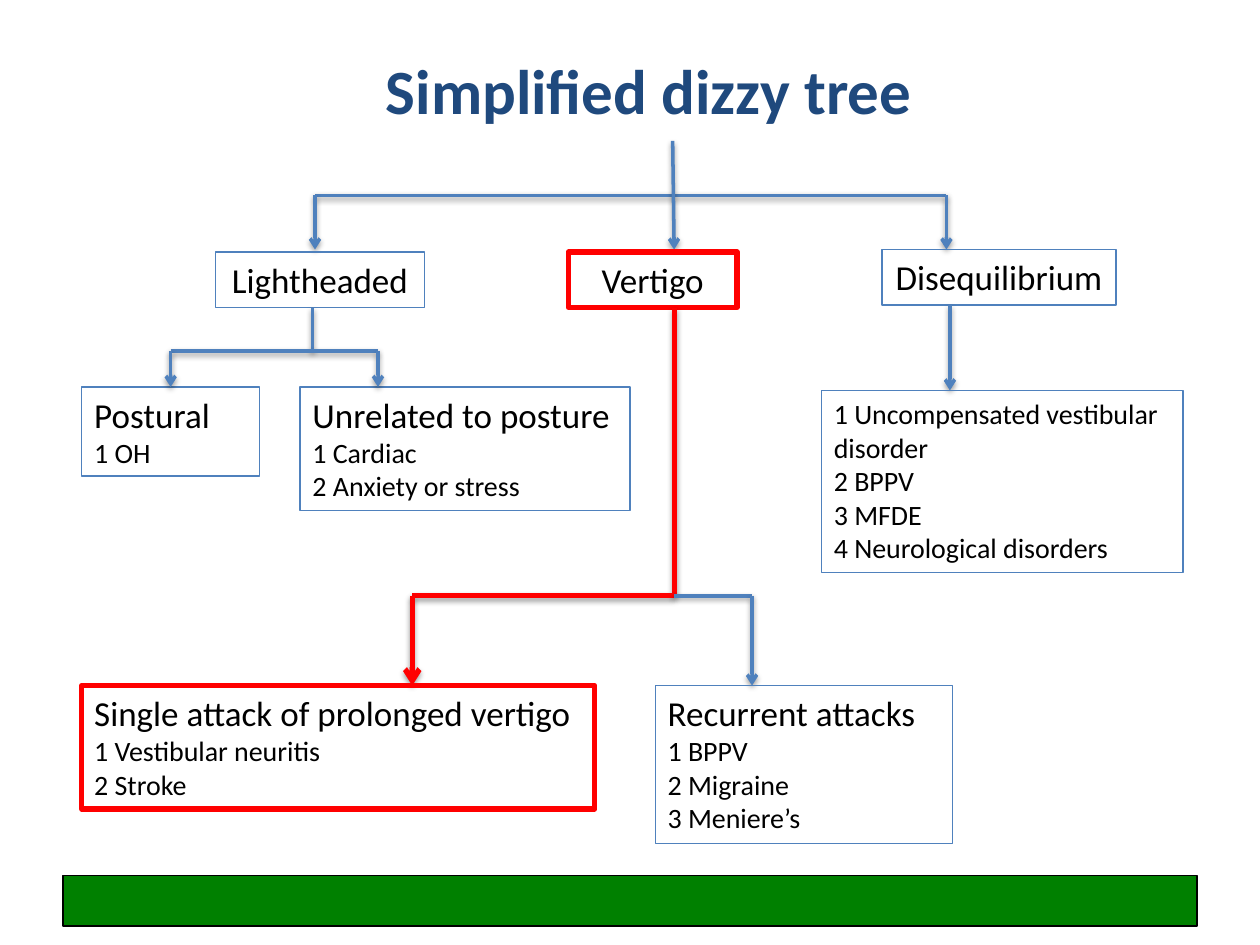
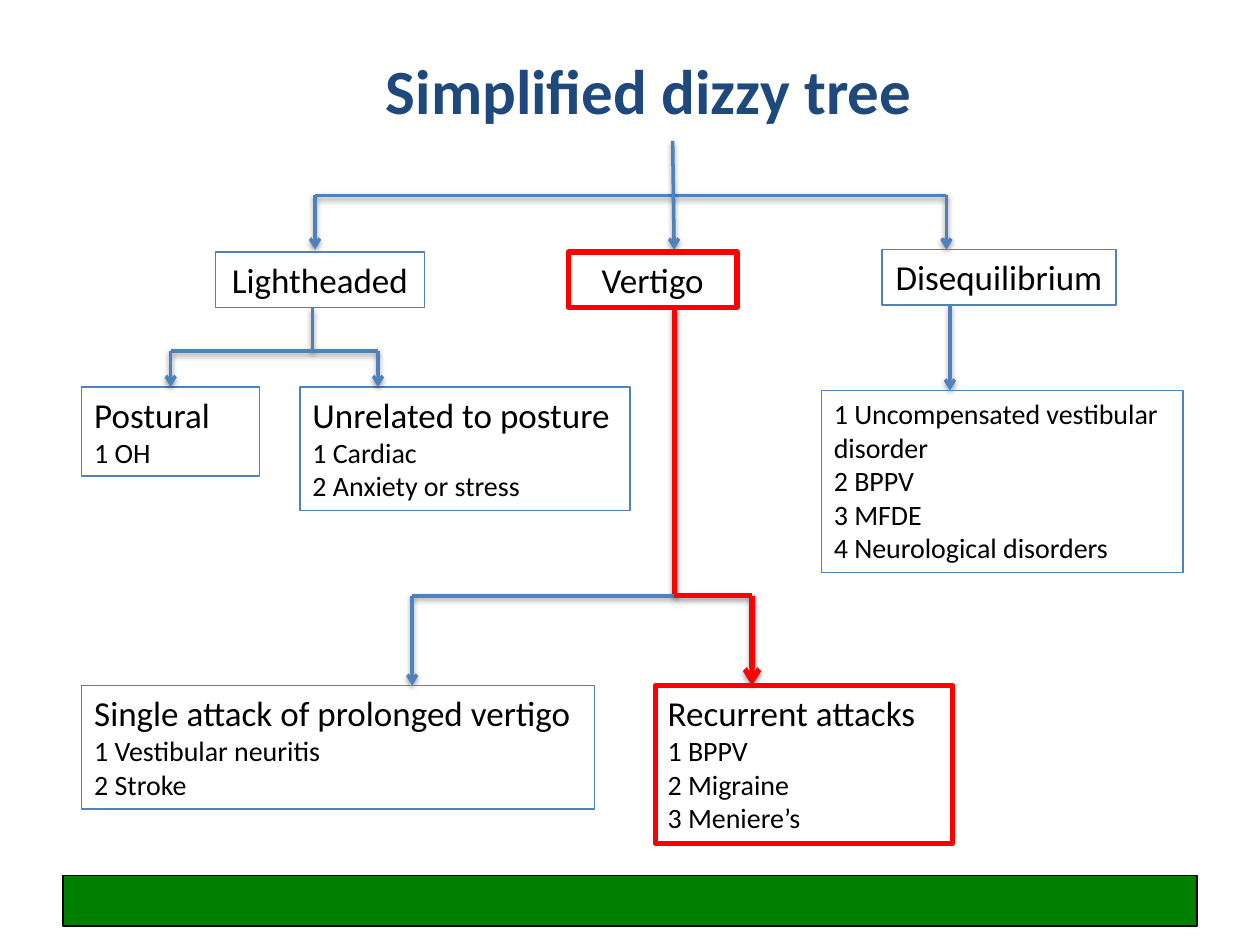
from pptx import Presentation
from pptx.dml.color import RGBColor
from pptx.enum.shapes import MSO_CONNECTOR, MSO_SHAPE
from pptx.enum.text import MSO_ANCHOR, MSO_AUTO_SIZE, PP_ALIGN
from pptx.oxml import parse_xml
from pptx.oxml.ns import nsdecls, qn
from pptx.util import Cm, Pt

RECT = MSO_SHAPE.RECTANGLE
STRAIGHT = MSO_CONNECTOR.STRAIGHT
MIDDLE = MSO_ANCHOR.MIDDLE
TOP = MSO_ANCHOR.TOP
GROW = MSO_AUTO_SIZE.SHAPE_TO_FIT_TEXT
LEFT, CENTER = PP_ALIGN.LEFT, PP_ALIGN.CENTER

FONT = "Calibri"
COLORS = {
    "title": "1F497D",
    "branch": "4F81BD",
    "highlight": "FF0000",
    "text": "000000",
    "band": "008000",
}
HEADING, ITEM = 20, 16
TITLE_ONLY = 5

TRUNK_X = 13.59
TYPE_BUS_Y, TYPE_TOP = 3.94, 5.03
LIGHT_X, LIGHT_BUS_Y, LIGHT_LEAF_TOP = 6.3, 7.08, 7.8
VERTIGO_BUS_Y, VERTIGO_LEAF_TOP = 12.01, 13.82
TYPE_HEIGHT, TYPE_BOTTOM = 1.12, 6.2

SHADOW = (
    f'<a:effectLst {nsdecls("a")}>'
    '<a:outerShdw blurRad="40000" dist="20000" dir="5400000" rotWithShape="0">'
    '<a:srgbClr val="000000"><a:alpha val="38000"/></a:srgbClr>'
    "</a:outerShdw></a:effectLst>"
)
ARROWHEAD = f'<a:tailEnd {nsdecls("a")} type="arrow"/>'


def rgb(name):
    return RGBColor.from_string(COLORS[name])


def format_paragraph(p, size, color="text", align=LEFT, bold=False):
    p.alignment = align
    for r in p.runs:
        r.font.name = FONT
        r.font.size = Pt(size)
        r.font.bold = bold
        r.font.color.rgb = rgb(color)


def add_title(s, text):
    title = s.shapes.title
    title.left, title.top = Cm(1.65), Cm(0.76)
    title.width, title.height = Cm(22.86), Cm(2.08)
    tf = title.text_frame
    tf.text = text
    tf.vertical_anchor = MIDDLE
    format_paragraph(tf.paragraphs[0], 36, "title", CENTER, True)


def add_rect(s, x, y, w, h, line_color, line_width):
    sp = s.shapes.add_shape(RECT, Cm(x), Cm(y), Cm(w), Cm(h))
    sp.shadow.inherit = False
    sp.fill.background()
    sp.line.color.rgb = rgb(line_color)
    sp.line.width = Pt(line_width)
    return sp


def add_band(s):
    band = add_rect(s, 1.27, 17.65, 22.86, 1.02, "text", 0.75)
    band.fill.solid()
    band.fill.fore_color.rgb = rgb("band")


def add_box(s, x, y, w, h, heading=None, items=(), align=LEFT, highlight=False):
    color, width = ("highlight", 3) if highlight else ("branch", 0.75)
    sp = add_rect(s, x, y, w, h, color, width)
    tf = sp.text_frame
    tf.word_wrap = True
    tf.auto_size = GROW
    tf.vertical_anchor = TOP
    lines = [heading, *items] if heading else items
    tf.text = "\n".join(lines)
    for i, p in enumerate(tf.paragraphs):
        format_paragraph(p, HEADING if heading and i == 0 else ITEM, align=align)
    return sp


def add_line(s, x1, y1, x2, y2, arrow=False, highlight=False):
    line = s.shapes.add_connector(STRAIGHT, Cm(x1), Cm(y1), Cm(x2), Cm(y2))
    line.line.color.rgb = rgb("highlight" if highlight else "branch")
    line.line.width = Pt(3 if highlight else 2)
    spPr = line._element.spPr
    if arrow:
        spPr.find(qn("a:ln")).append(parse_xml(ARROWHEAD))
    spPr.append(parse_xml(SHADOW))
    return line


def add_fork(s, bus_y, end_y, xs):
    add_line(s, xs[0], bus_y, xs[-1], bus_y)
    return [add_line(s, x, bus_y, x, end_y, arrow=True) for x in xs]


def add_types(s):
    add_fork(s, TYPE_BUS_Y, TYPE_TOP, (6.35, 19.08))
    add_line(s, TRUNK_X - 0.03, 2.84, TRUNK_X, TYPE_TOP, arrow=True)
    types = (
        ("Lightheaded", 4.34, 5.08, 4.22, False),
        ("Vertigo", 11.46, 5.08, 3.4, True),
        ("Disequilibrium", 17.78, 5.03, 4.72, False),
    )
    for name, x, y, w, highlight in types:
        add_box(s, x, y, w, TYPE_HEIGHT, name, align=CENTER, highlight=highlight)


def add_lightheaded_causes(s):
    postural = add_box(s, 1.65, LIGHT_LEAF_TOP, 3.58, 1.8, "Postural", ["1 OH"])
    add_box(s, 6.05, LIGHT_LEAF_TOP, 6.65, 2.49, "Unrelated to posture",
            ["1 Cardiac", "2 Anxiety or stress"])
    add_line(s, LIGHT_X, TYPE_BOTTOM, LIGHT_X, LIGHT_BUS_Y)
    drops = add_fork(s, LIGHT_BUS_Y, LIGHT_LEAF_TOP, (3.44, 7.62))
    drops[0].end_connect(postural, 0)


def add_disequilibrium_causes(s):
    add_line(s, 19.15, 6.15, 19.15, 7.87, arrow=True)
    add_box(s, 16.56, 7.87, 7.29, 3.68, items=[
        "1 Uncompensated vestibular disorder", "2 BPPV", "3 MFDE",
        "4 Neurological disorders"])


def add_vertigo_causes(s, active):
    add_line(s, TRUNK_X, TYPE_BOTTOM, TRUNK_X, VERTIGO_BUS_Y, highlight=True)
    causes = (
        ("Single attack of prolonged vertigo",
         ["1 Vestibular neuritis", "2 Stroke"], 8.31, 1.65, 10.34, 2.49),
        ("Recurrent attacks",
         ["1 BPPV", "2 Migraine", "3 Meniere’s"], 15.16, 13.21, 5.99, 3.18),
    )
    for heading, items, drop_x, x, w, h in causes:
        on = heading == active
        add_line(s, TRUNK_X, VERTIGO_BUS_Y, drop_x, VERTIGO_BUS_Y, highlight=on)
        add_line(s, drop_x, VERTIGO_BUS_Y, drop_x, VERTIGO_LEAF_TOP,
                 arrow=True, highlight=on)
        add_box(s, x, VERTIGO_LEAF_TOP, w, h, heading, items, highlight=on)


def add_tree_slide(prs, active):
    s = prs.slides.add_slide(prs.slide_layouts[TITLE_ONLY])
    add_band(s)
    add_title(s, "Simplified dizzy tree")
    add_types(s)
    add_lightheaded_causes(s)
    add_disequilibrium_causes(s)
    add_vertigo_causes(s, active)


def main():
    prs = Presentation()
    prs.slide_width, prs.slide_height = Cm(25.4), Cm(19.05)
    for active in ("Single attack of prolonged vertigo", "Recurrent attacks"):
        add_tree_slide(prs, active)
    prs.save("out.pptx")


if __name__ == "__main__":
    main()
